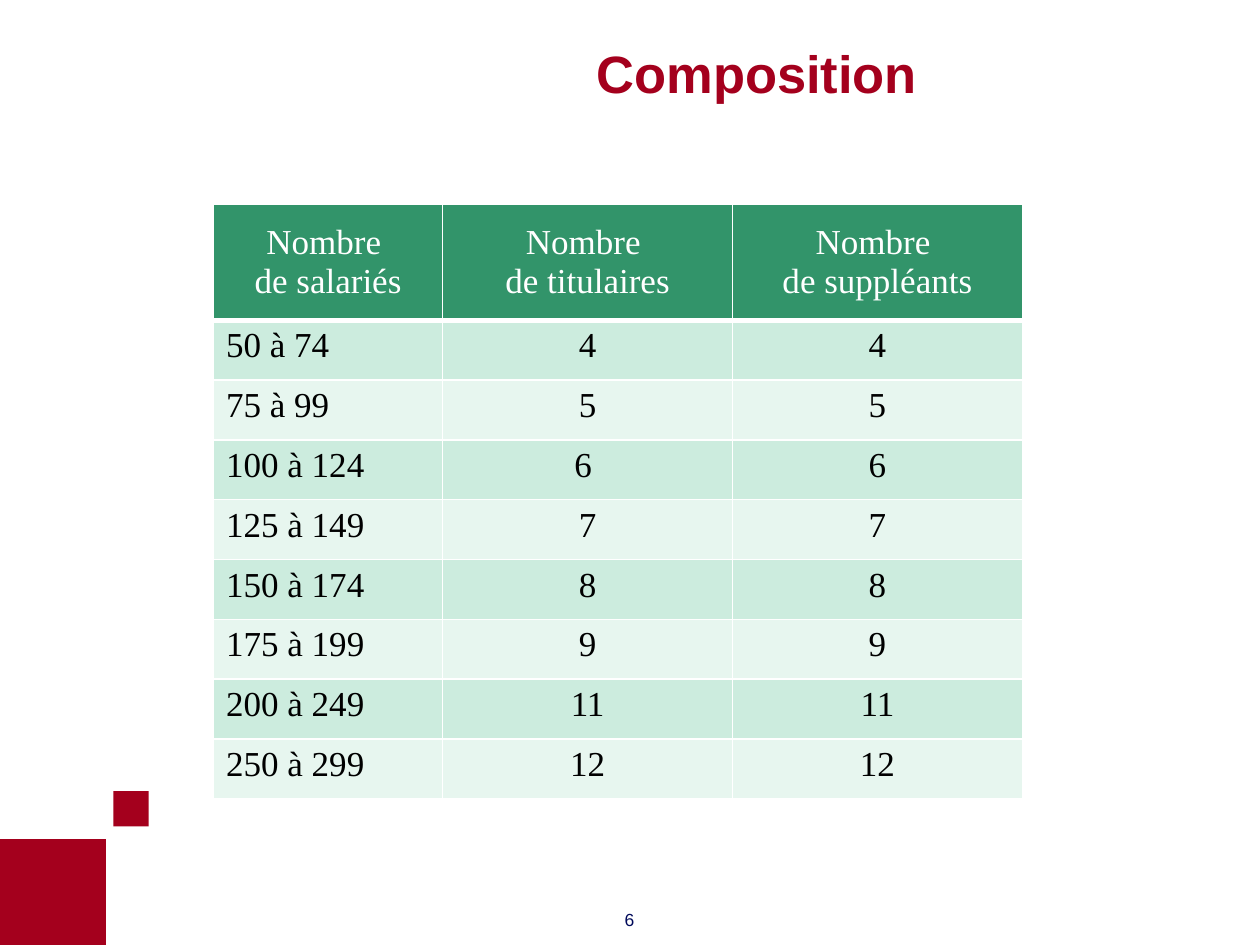
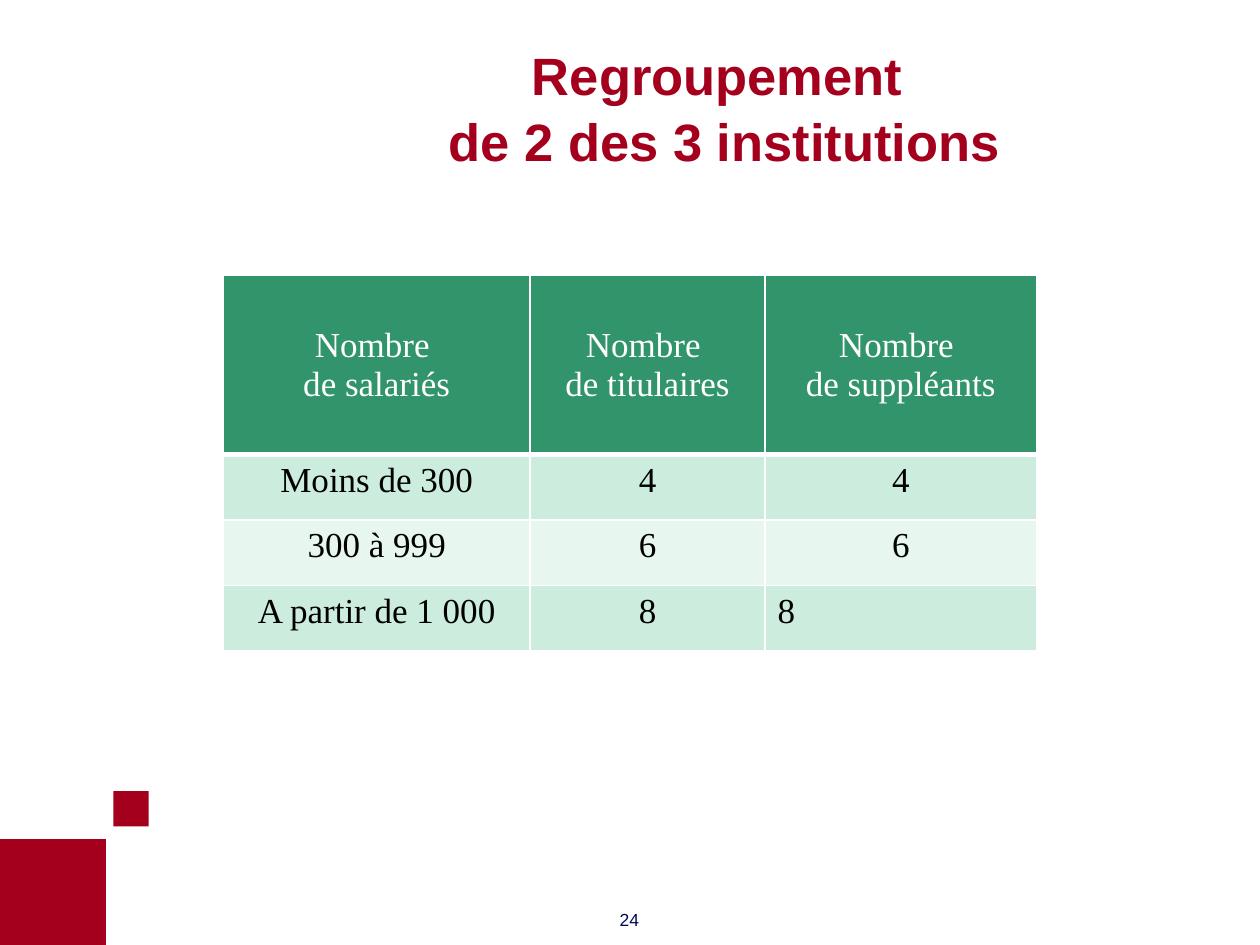
import collections
import dataclasses

import lxml.etree
import pptx
import pptx.dml.color
import pptx.enum.shapes
import pptx.enum.text
import pptx.oxml.ns
import pptx.util

Pt = pptx.util.Pt
RGB = pptx.dml.color.RGBColor.from_string
ALIGN = pptx.enum.text.PP_ALIGN
ANCHOR = pptx.enum.text.MSO_ANCHOR
Box = collections.namedtuple("Box", "left top width height")


@dataclasses.dataclass(frozen=True)
class Theme:
    red: str = "A4001D"
    navy: str = "000A5A"
    white: str = "FFFFFF"
    black: str = "000000"
    header_green: str = "32946A"
    bands: tuple = ("CCECDE", "E7F6EF")
    title_font: str = "Arial"
    table_font: str = "Times New Roman"
    title_size: int = 30
    table_size: int = 20
    number_size: int = 10
    title_spacing: float = 1.05
    grid_width: int = 1
    header_rule_width: int = 3


THEME = Theme()
SLIDE = Box(0, 0, 720, 540)
HEADERS = ["Nombre \nde salariés", "Nombre \nde titulaires", "Nombre \nde suppléants"]


def place(shape, box):
    for name, value in box._asdict().items():
        setattr(shape, name, Pt(value))


def format_text(text_frame, alignment, color, **font_format):
    for paragraph in text_frame.paragraphs:
        paragraph.alignment = alignment
        for name, value in font_format.items():
            setattr(paragraph.font, name, value)
        paragraph.font.color.rgb = RGB(color)


def add_title(slide, box, text):
    title = slide.shapes.title
    place(title, box)
    frame = title.text_frame
    frame.text = text
    frame_format = {
        "word_wrap": True,
        "auto_size": pptx.enum.text.MSO_AUTO_SIZE.NONE,
        "vertical_anchor": ANCHOR.MIDDLE,
    }
    for name, value in frame_format.items():
        setattr(frame, name, value)
    format_text(frame, ALIGN.CENTER, THEME.red, name=THEME.title_font,
                size=Pt(THEME.title_size), bold=True)
    for paragraph in frame.paragraphs:
        paragraph.line_spacing = THEME.title_spacing


def add_corner_squares(slide, box):
    """Put a large square in the box's bottom left and a small one in its top right."""
    large, small = 60.5, 20.2
    squares = (
        Box(box.left, box.top + box.height - large, large, large),
        Box(box.left + box.width - small, box.top, small, small),
    )
    for square_box in squares:
        square = slide.shapes.add_shape(
            pptx.enum.shapes.MSO_SHAPE.RECTANGLE, *map(Pt, square_box))
        square.shadow.inherit = False
        square.fill.solid()
        square.fill.fore_color.rgb = RGB(THEME.red)
        square.line.fill.background()


def add_slide_number(slide, box, number):
    frame = slide.shapes.add_textbox(*map(Pt, box)).text_frame
    frame.word_wrap = True
    frame.text = str(number)
    format_text(frame, ALIGN.CENTER, THEME.navy, name=THEME.title_font,
                size=Pt(THEME.number_size))


def set_borders(cell, bottom_width):
    properties = cell._tc.get_or_add_tcPr()
    for index, side in enumerate(("lnL", "lnR", "lnT", "lnB")):
        width = bottom_width if side == "lnB" else THEME.grid_width
        line = lxml.etree.Element(pptx.oxml.ns.qn(f"a:{side}"), w=str(Pt(width)))
        fill = lxml.etree.SubElement(line, pptx.oxml.ns.qn("a:solidFill"))
        lxml.etree.SubElement(fill, pptx.oxml.ns.qn("a:srgbClr"), val=THEME.white)
        properties.insert(index, line)


def fill_cell(cell, text, alignment, is_header, fill):
    cell.text_frame.text = text
    cell.vertical_anchor = ANCHOR.MIDDLE if is_header else ANCHOR.TOP
    format_text(cell.text_frame, alignment, THEME.white if is_header else THEME.black,
                name=THEME.table_font, size=Pt(THEME.table_size), bold=False)
    cell.fill.solid()
    cell.fill.fore_color.rgb = RGB(fill)
    set_borders(cell, THEME.header_rule_width if is_header else THEME.grid_width)


def add_staff_table(slide, box, column_widths, header_height, body, left_cells):
    """Fill the box with a headed, banded table; left_cells are (row, column) pairs."""
    rows = [HEADERS] + body
    table = slide.shapes.add_table(len(rows), len(HEADERS), *map(Pt, box)).table
    table.first_row = table.horz_banding = False
    for column, width in zip(table.columns, column_widths):
        column.width = Pt(width)
    body_height = (box.height - header_height) / len(body)
    for row_index, texts in enumerate(rows):
        is_header = row_index == 0
        table.rows[row_index].height = Pt(header_height if is_header else body_height)
        fill = THEME.header_green if is_header else THEME.bands[(row_index - 1) % 2]
        for column_index, text in enumerate(texts):
            is_left = (row_index, column_index) in left_cells
            fill_cell(table.cell(row_index, column_index), text,
                      ALIGN.LEFT if is_left else ALIGN.CENTER, is_header, fill)


def add_table_slide(presentation, number, title, title_box, **table_format):
    slide = presentation.slides.add_slide(
        presentation.slide_layouts.get_by_name("Title Only"))
    add_corner_squares(slide, Box(0, 452, 85, 88))
    add_slide_number(slide, Box(334.8, 516.2, 49.7, 23.8), number)
    add_title(slide, title_box, title)
    add_staff_table(slide, **table_format)


def main():
    presentation = pptx.Presentation()
    presentation.slide_width = Pt(SLIDE.width)
    presentation.slide_height = Pt(SLIDE.height)

    composition = [
        ["50 à 74", "4", "4"],
        ["75 à 99", "5", "5"],
        ["100 à 124", "6 ", "6"],
        ["125 à 149", "7", "7"],
        ["150 à 174", "8", "8"],
        ["175 à 199", "9", "9"],
        ["200 à 249", "11", "11"],
        ["250 à 299", "12", "12"],
    ]
    add_table_slide(
        presentation, 6, "Composition ", Box(190.1, 15.1, 493.2, 51.1),
        box=Box(122, 116.8, 462.2, 339.8), column_widths=(131, 165.6, 165.6),
        header_height=66.2, body=composition,
        left_cells={(row, 0) for row in range(1, len(composition) + 1)})

    grouping = [
        ["Moins de 300", "4", "4"],
        ["300 à 999", "6", "6"],
        ["A partir de 1 000", "8", "8"],
    ]
    add_table_slide(
        presentation, 24, "Regroupement \vde 2 des 3 institutions",
        Box(144.7, 15.1, 538.6, 90.7),
        box=Box(127.6, 157, 464.8, 215), column_widths=(175.4, 134.2, 155.2),
        header_height=102.8, body=grouping, left_cells={(3, 2)})

    presentation.save("out.pptx")


if __name__ == "__main__":
    main()
